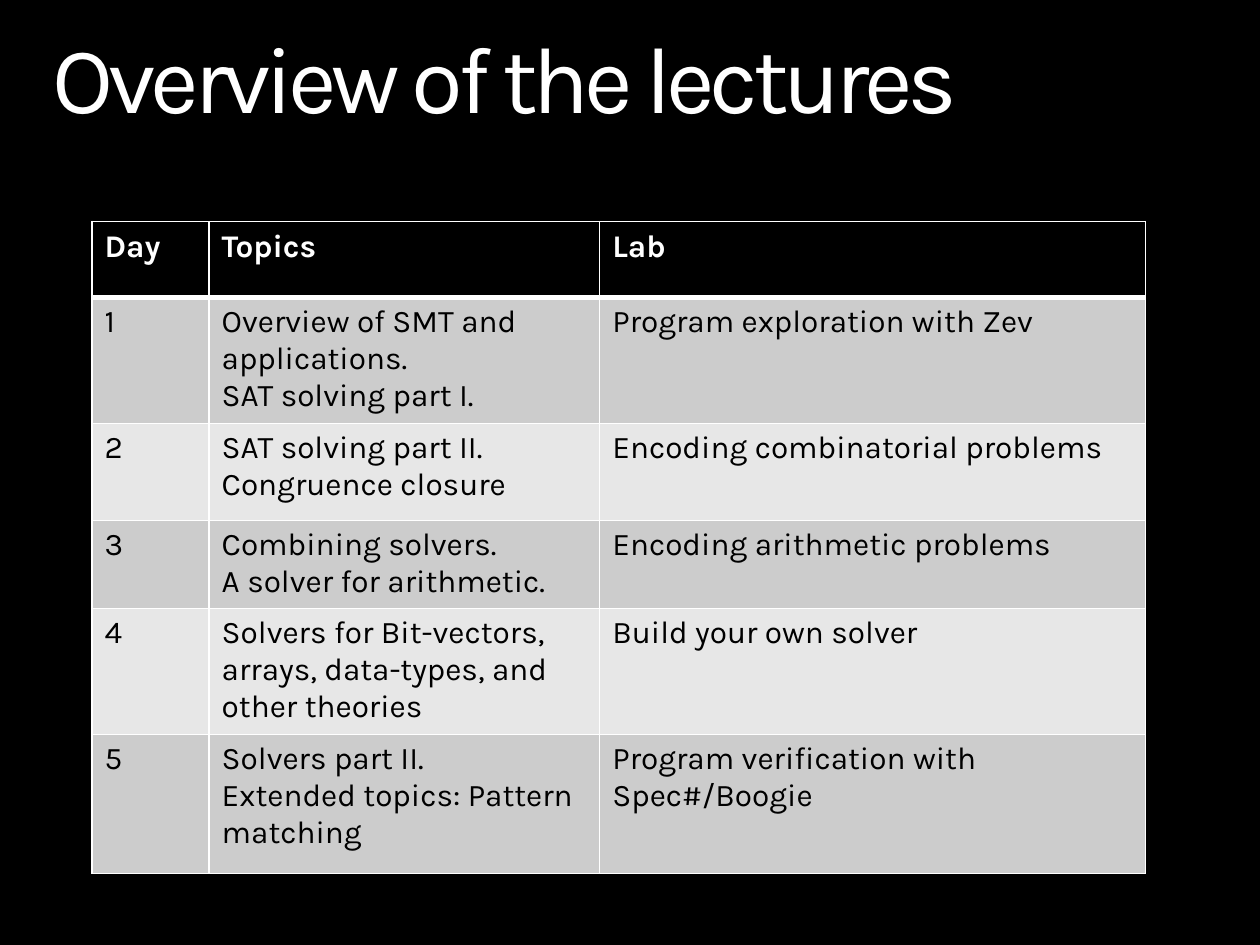
from lxml import etree
from pptx import Presentation
from pptx.dml.color import RGBColor
from pptx.enum import text
from pptx.oxml.ns import qn
from pptx.util import Inches, Pt

BLACK = RGBColor(0x00, 0x00, 0x00)
WHITE = RGBColor(0xFF, 0xFF, 0xFF)
DARK_BAND = RGBColor(0xCC, 0xCC, 0xCC)
LIGHT_BAND = RGBColor(0xE7, 0xE7, 0xE7)
FONT = "Karla"

COLUMN_WIDTHS = (0.93, 3.1, 4.33)
ROW_HEIGHTS = (0.6, 0.77, 0.77, 0.6, 0.92, 1.1)
SCHEDULE = (
    ("Day", "Topics", "Lab"),
    ("1", "Overview of SMT and applications.\nSAT solving part I.",
     "Program exploration with Zev"),
    ("2", "SAT solving part II.\nCongruence closure",
     "Encoding combinatorial problems"),
    ("3", "Combining solvers.\nA solver for arithmetic.",
     "Encoding arithmetic problems"),
    ("4", "Solvers for Bit-vectors, arrays, data-types, and other theories",
     "Build your own solver"),
    ("5", "Solvers part II.\nExtended topics: Pattern matching",
     "Program verification with Spec#/Boogie"),
)


def style_font(font, size, color, bold=False):
    font.name = FONT
    font.size = Pt(size)
    font.bold = bold
    font.color.rgb = color


def place_title(slide, left, top, width, height):
    title = slide.shapes.title
    title.left, title.top, title.width, title.height = left, top, width, height
    frame = title.text_frame
    frame.margin_left = frame.margin_top = 0
    frame.margin_right = frame.margin_bottom = 0
    frame.vertical_anchor = text.MSO_ANCHOR.TOP
    frame.word_wrap = True
    frame.auto_size = text.MSO_AUTO_SIZE.SHAPE_TO_FIT_TEXT
    frame.text = "Overview of the lectures"
    heading = frame.paragraphs[0]
    heading.alignment = text.PP_ALIGN.LEFT
    heading.line_spacing = 0.9
    style_font(heading.font, 54, WHITE)
    # Letter spacing, in hundredths of a point
    heading.runs[0].font._element.set("spc", "-300")


def set_borders(cell, widths):
    """Draw white cell borders; widths maps each side (L, R, T, B) to points."""
    properties = cell._tc.get_or_add_tcPr()
    for side, width in widths.items():
        line = etree.SubElement(properties, qn(f"a:ln{side}"), w=str(Pt(width)))
        fill = etree.SubElement(line, qn("a:solidFill"))
        etree.SubElement(fill, qn("a:srgbClr"), val=str(WHITE))


def place_schedule(slide, left, top, width, height):
    table = slide.shapes.add_table(
        len(SCHEDULE), len(COLUMN_WIDTHS), left, top, width, height).table
    for column, column_width in zip(table.columns, COLUMN_WIDTHS):
        column.width = Inches(column_width)
    for row, row_height in zip(table.rows, ROW_HEIGHTS):
        row.height = Inches(row_height)

    for r, entries in enumerate(SCHEDULE):
        header = r == 0
        band = BLACK if header else DARK_BAND if r % 2 else LIGHT_BAND
        for c, entry in enumerate(entries):
            cell = table.cell(r, c)
            cell.text = entry
            for paragraph in cell.text_frame.paragraphs:
                style_font(paragraph.font, 18, WHITE if header else BLACK, header)
            set_borders(cell, {"L": 1, "R": 1, "T": 3 if r == 1 else 1,
                               "B": 3 if header else 1})
            cell.fill.solid()
            cell.fill.fore_color.rgb = band


def main():
    presentation = Presentation()
    presentation.slide_width = Inches(10)
    presentation.slide_height = Inches(7.5)
    slide = presentation.slides.add_slide(presentation.slide_layouts[5])
    slide.background.fill.solid()
    slide.background.fill.fore_color.rgb = BLACK
    place_title(slide, Inches(0.42), Inches(0.25), Inches(9.17), Inches(0.82))
    place_schedule(slide, Inches(0.73), Inches(1.76),
                   Inches(sum(COLUMN_WIDTHS)), Inches(sum(ROW_HEIGHTS)))
    presentation.save("out.pptx")


if __name__ == "__main__":
    main()
